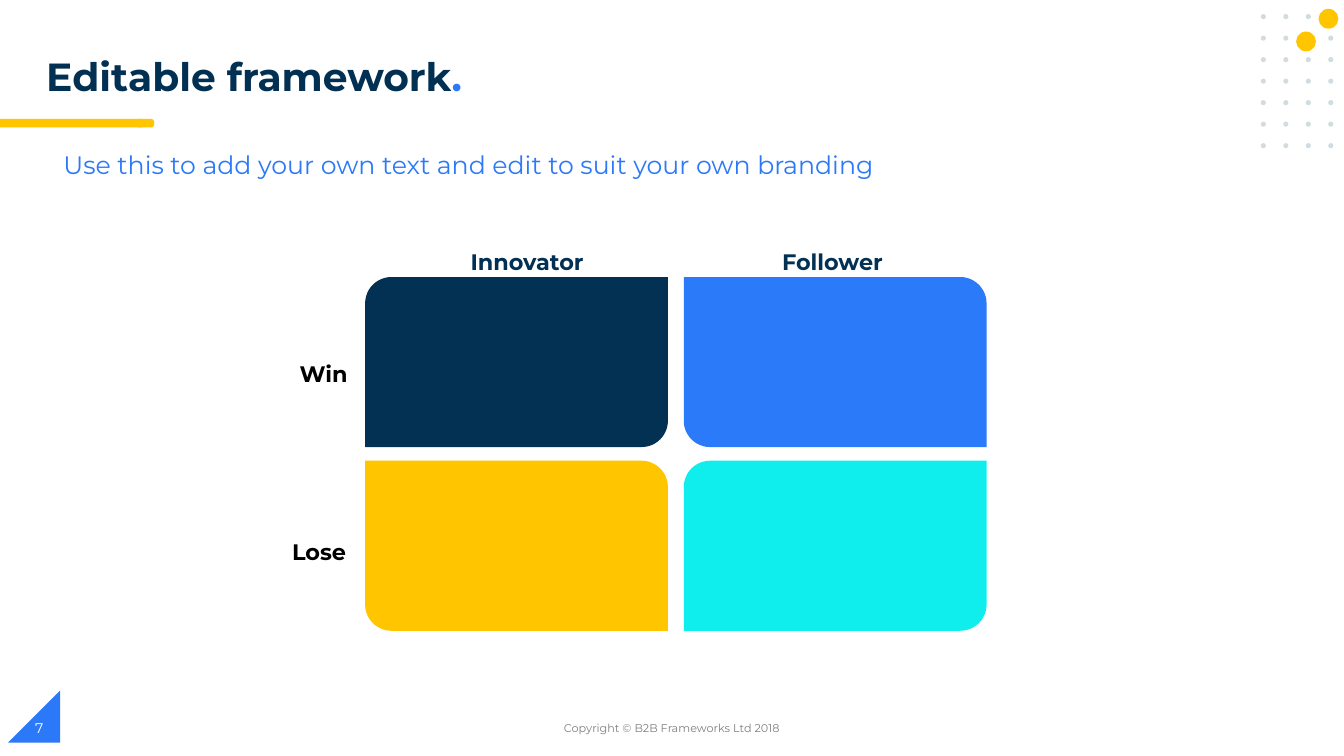
"""Build a two-by-two framework slide with column and row headings."""
from itertools import product

from pptx import Presentation
from pptx.dml.color import RGBColor
from pptx.enum import shapes, text
from pptx.util import Pt

COLOURS = {
    "navy": "023053", "tile_navy": "023154", "blue": "2B79F8",
    "tile_blue": "2B7AF9", "yellow": "FFC600", "cyan": "0FEDED",
    "dot": "D1DBE0", "grey": "7F7F7F", "white": "FFFFFF", "black": "000000",
}
FONT = "Montserrat"
SHAPE = shapes.MSO_SHAPE
TOP, MIDDLE = text.MSO_ANCHOR.TOP, text.MSO_ANCHOR.MIDDLE
LEFT, CENTER = text.PP_ALIGN.LEFT, text.PP_ALIGN.CENTER

STANDARD = (7.2, 3.6, 7.2, 3.6)
TIGHT = (0.72, 0.72, 0, 0)
EVEN = (7.2, 7.2, 7.2, 7.2)

LABELS = [
    {"spans": [("Editable framework", "navy"), (".", "blue")],
     "frame": (25.9, 37.4, 406, 43.2), "size": 28, "bold": True, "spacing": 0.9},
    {"spans": [("Copyright © B2B Frameworks Ltd 2018", "grey")],
     "frame": (318, 505.4, 324, 28.8), "size": 8, "anchor": MIDDLE, "align": CENTER},
    {"spans": [("7", "white")],
     "frame": (18, 505.4, 216, 28.8), "size": 10, "anchor": MIDDLE},
    {"spans": [("Use this to add your own text and edit to suit your own branding", "blue")],
     "frame": (38.2, 103, 618.5, 34.6), "size": 18},
    {"spans": [("Innovator", "navy")],
     "frame": (335.5, 176.4, 92.9, 20.2), "size": 16, "bold": True, "insets": TIGHT},
    {"spans": [("Follower", "tile_navy")],
     "frame": (558, 176.4, 89.3, 20.2), "size": 16, "bold": True, "insets": TIGHT},
    {"spans": [("Win", "black")], "frame": (206.6, 249.8, 49, 22.3),
     "size": 16, "bold": True, "insets": EVEN, "align": CENTER},
    {"spans": [("Lose", "black")], "frame": (200.2, 377.3, 55.4, 22.3),
     "size": 16, "bold": True, "insets": EVEN, "align": CENTER},
]

TILES = [["tile_navy", "tile_blue"], ["yellow", "cyan"]]
TILE_ORIGIN, TILE_SIZE, TILE_STEP = (260.8, 197.9), (216.3, 121.5), (227.6, 131.2)
TILE_CORNER = 0.155

DOT_COLUMNS, DOT_ROWS, DOT_SIZE = 4, 7, 3.6
DOT_ORIGIN, DOT_STEP = (900.6, 10.1), (16.05, 15.36)
LARGE_DOTS, LARGE_DOT_SIZE = [(941.8, 6.3), (925.8, 22.5)], 14.2
BAR_TOPS, BAR_HEIGHT = (85, 86.4), 4.6


def rgb(name):
    return RGBColor.from_string(COLOURS[name])


def grid_point(origin, step, column, row):
    return origin[0] + column * step[0], origin[1] + row * step[1]


def add_block(page, kind, frame, colour):
    block = page.shapes.add_shape(kind, *map(Pt, frame))
    block.shadow.inherit = False
    block.fill.solid()
    block.fill.fore_color.rgb = rgb(colour)
    block.line.fill.background()
    return block


def add_label(page, label):
    frame = page.shapes.add_textbox(*map(Pt, label["frame"])).text_frame
    left, top, right, bottom = map(Pt, label.get("insets", STANDARD))
    settings = {
        "word_wrap": True, "vertical_anchor": label.get("anchor", TOP),
        "margin_left": left, "margin_top": top,
        "margin_right": right, "margin_bottom": bottom,
    }
    for name, value in settings.items():
        setattr(frame, name, value)
    para = frame.paragraphs[0]
    para.alignment = label.get("align", LEFT)
    para.line_spacing = label.get("spacing", 1.0)
    font = {"name": FONT, "size": Pt(label["size"]), "bold": label.get("bold", False)}
    for words, colour in label["spans"]:
        span = para.add_run()
        span.text = words
        for name, value in font.items():
            setattr(span.font, name, value)
        span.font.color.rgb = rgb(colour)


def add_decoration(page):
    corner = add_block(page, SHAPE.RIGHT_TRIANGLE, (5.8, 493.2, 37.2, 37.2), "blue")
    corner.rotation = 270
    for top in BAR_TOPS:
        add_block(page, SHAPE.FLOWCHART_TERMINATOR, (96.5, top, 13.7, BAR_HEIGHT), "yellow")
        add_block(page, SHAPE.RECTANGLE, (0, top, 101.5, BAR_HEIGHT), "yellow")
    for column, row in product(range(DOT_COLUMNS), range(DOT_ROWS)):
        point = grid_point(DOT_ORIGIN, DOT_STEP, column, row)
        add_block(page, SHAPE.OVAL, (*point, DOT_SIZE, DOT_SIZE), "dot")
    for point in LARGE_DOTS:
        add_block(page, SHAPE.OVAL, (*point, LARGE_DOT_SIZE, LARGE_DOT_SIZE), "yellow")


def add_tiles(page):
    for row, colours in enumerate(TILES):
        for column, colour in enumerate(colours):
            point = grid_point(TILE_ORIGIN, TILE_STEP, column, row)
            tile = add_block(page, SHAPE.ROUND_2_DIAG_RECTANGLE, (*point, *TILE_SIZE), colour)
            falling = row == column
            tile.adjustments[0] = TILE_CORNER if falling else 0
            tile.adjustments[1] = 0 if falling else TILE_CORNER


def main():
    deck = Presentation()
    deck.slide_width, deck.slide_height = Pt(960), Pt(540)
    page = deck.slides.add_slide(deck.slide_layouts[6])
    add_decoration(page)
    add_tiles(page)
    for label in LABELS:
        add_label(page, label)
    deck.save("out.pptx")


if __name__ == "__main__":
    main()
